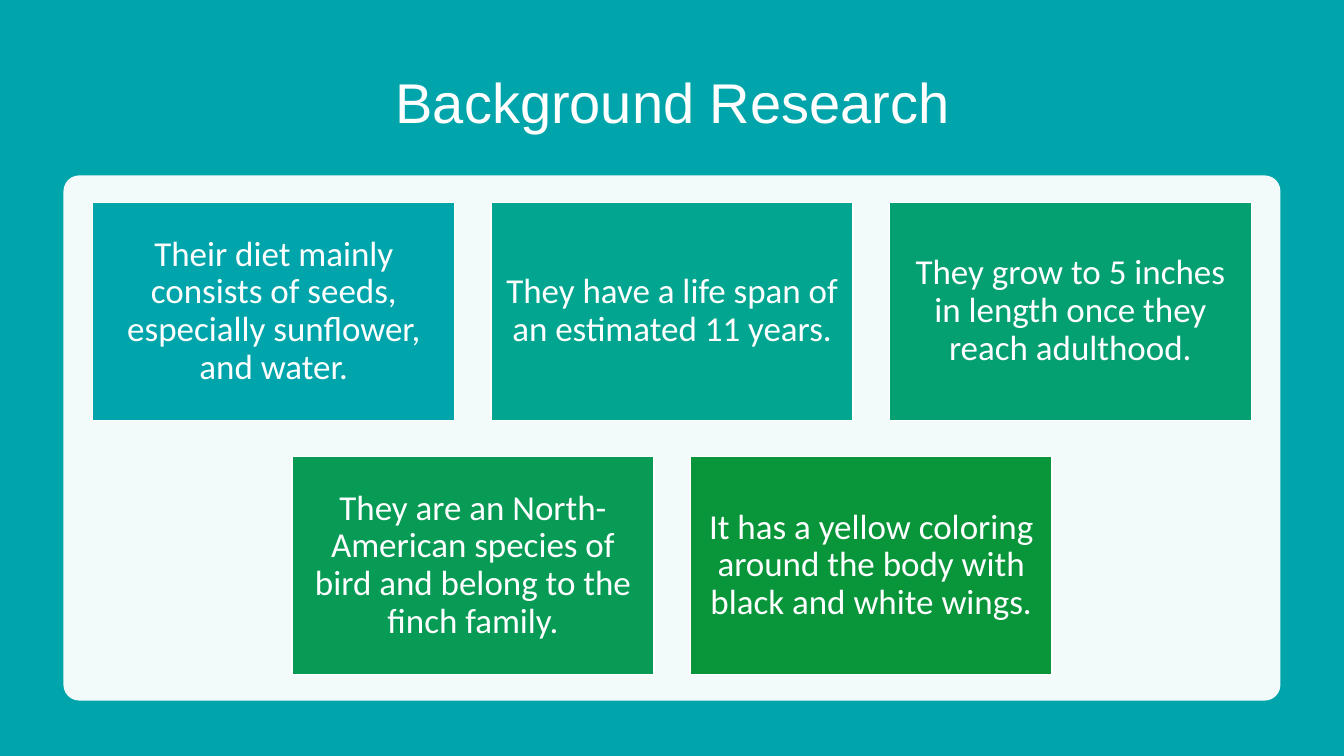
from lxml.etree import SubElement
from pptx import Presentation
from pptx.dml.color import RGBColor
from pptx.enum.shapes import MSO_SHAPE
from pptx.enum.text import MSO_ANCHOR, PP_ALIGN
from pptx.oxml.ns import qn
from pptx.util import Inches, Pt

TITLE = "Background Research"
CARD_ROWS = [
    [
        ("Their diet mainly consists of seeds, especially sunflower, and water.", "00A5AB"),
        ("They have a life span of an estimated 11 years.", "02A690"),
        ("They grow to 5 inches in length once they reach adulthood.", "05A071"),
    ],
    [
        ("They are an North-American species of bird and belong to the finch family.", "079B55"),
        ("It has a yellow coloring around the body with black and white wings.", "09963B"),
    ],
]
TEAL, WHITE = "00A5AB", "FFFFFF"
SLIDE_WIDTH, SLIDE_HEIGHT = 13.33, 7.5
CARD_WIDTH, CARD_HEIGHT, CARD_GAP = 3.59, 2.16, 0.36
CARDS_TOP = 2.01


def color(hex_string):
    return RGBColor.from_string(hex_string)


def add_box(slide, kind, left, top, width, height, fill):
    shape = slide.shapes.add_shape(
        kind, Inches(left), Inches(top), Inches(width), Inches(height))
    shape.shadow.inherit = False
    shape.fill.solid()
    shape.fill.fore_color.rgb = color(fill)
    shape.line.fill.background()
    return shape


def write(shape, text, font_name, size):
    """Put one centred white paragraph in the middle of the shape."""
    frame = shape.text_frame
    frame.word_wrap = True
    frame.vertical_anchor = MSO_ANCHOR.MIDDLE
    frame.margin_left = frame.margin_right = Inches(0.1)
    frame.margin_top = frame.margin_bottom = Inches(0.1)
    paragraph = frame.paragraphs[0]
    paragraph.text = text
    paragraph.alignment = PP_ALIGN.CENTER
    paragraph.line_spacing = 0.9
    paragraph.font.name = font_name
    paragraph.font.size = Pt(size)
    paragraph.font.color.rgb = color(WHITE)


def add_panel(slide):
    panel = add_box(slide, MSO_SHAPE.ROUNDED_RECTANGLE, 0.63, 1.74, 12.07, 5.21, WHITE)
    panel.adjustments[0] = 0.03
    fill_color = panel.fill._xPr.find(qn("a:solidFill"))[0]
    SubElement(fill_color, qn("a:alpha"), val="95000")


def add_cards(slide):
    for row, cards in enumerate(CARD_ROWS):
        row_width = len(cards) * (CARD_WIDTH + CARD_GAP) - CARD_GAP
        row_left = (SLIDE_WIDTH - row_width) / 2
        top = CARDS_TOP + row * (CARD_HEIGHT + CARD_GAP)
        for column, (text, fill) in enumerate(cards):
            left = row_left + column * (CARD_WIDTH + CARD_GAP)
            card = add_box(slide, MSO_SHAPE.RECTANGLE, left, top, CARD_WIDTH, CARD_HEIGHT, fill)
            card.line.color.rgb = color(WHITE)
            card.line.width = Pt(1)
            write(card, text, "Calibri", 25)


def main():
    presentation = Presentation()
    presentation.slide_width = Inches(SLIDE_WIDTH)
    presentation.slide_height = Inches(SLIDE_HEIGHT)
    slide = presentation.slides.add_slide(presentation.slide_layouts[6])
    slide.background.fill.solid()
    slide.background.fill.fore_color.rgb = color(TEAL)

    title = slide.shapes.add_textbox(Inches(0.92), Inches(0.5), Inches(11.5), Inches(1.1))
    write(title, TITLE, "Arial", 40)
    add_panel(slide)
    add_cards(slide)
    presentation.save("out.pptx")


if __name__ == "__main__":
    main()
